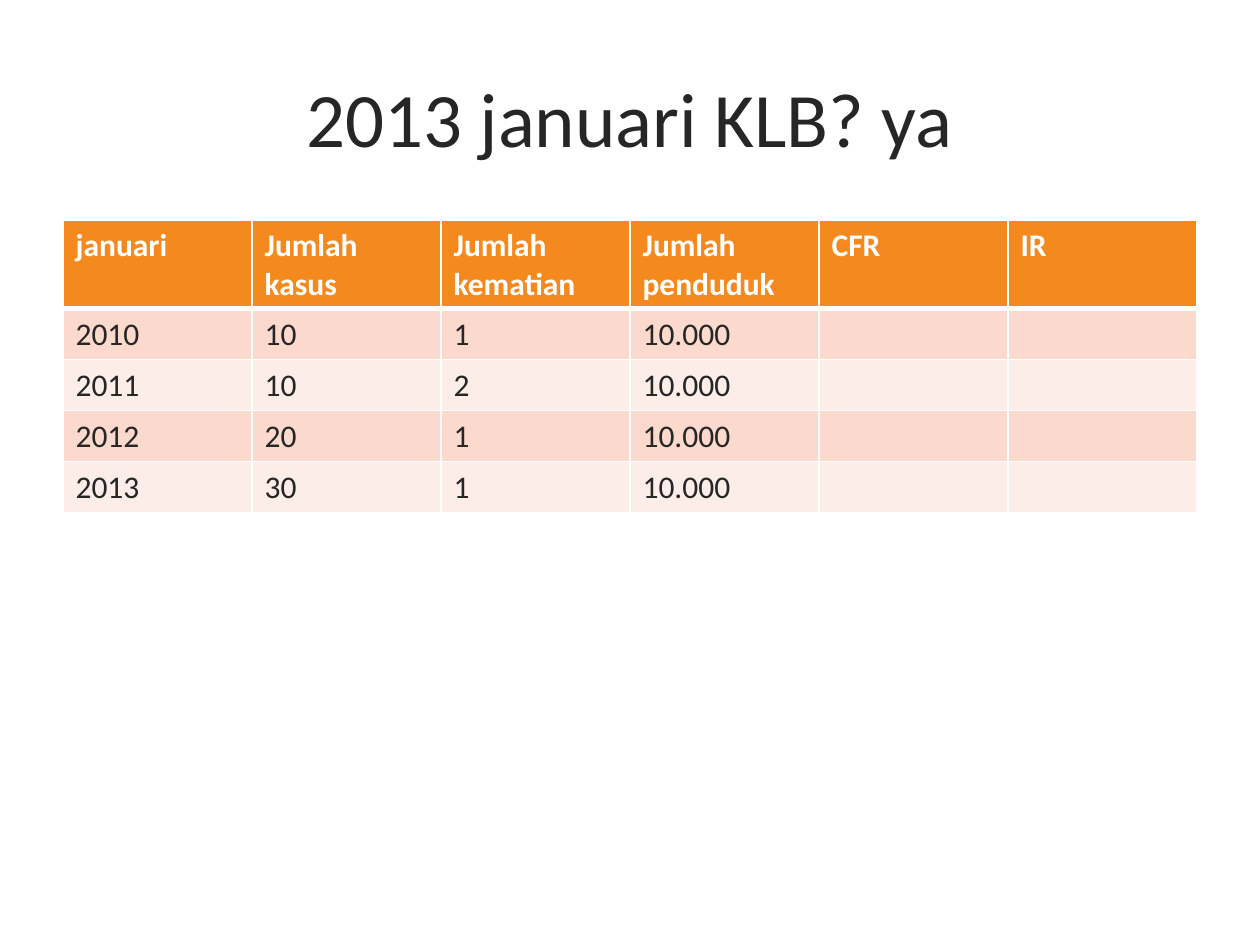
from dataclasses import dataclass

from lxml.etree import SubElement
from pptx import Presentation
from pptx.dml.color import RGBColor as RGB
from pptx.enum.text import MSO_ANCHOR as Anchor, PP_ALIGN as Align
from pptx.oxml.ns import qn
from pptx.util import Inches, Pt


@dataclass(frozen=True)
class Theme:
    font: str = "Calibri"
    ink: str = "262626"
    white: str = "FFFFFF"
    header: str = "F4891E"
    bands: tuple = ("FBDACD", "FDEDE8")
    title_size: int = 44
    table_size: int = 18
    rule: int = 1
    header_rule: int = 3


theme = Theme()


def add_run(paragraph, text, size, color, bold=False):
    run = paragraph.add_run()
    run.text = text
    run.font.name = theme.font
    run.font.size = Pt(size)
    run.font.bold = bold
    run.font.color.rgb = RGB.from_string(color)


def add_border(cell, side, width):
    line = SubElement(cell._tc.get_or_add_tcPr(), qn(f"a:ln{side}"), w=str(Pt(width)))
    SubElement(SubElement(line, qn("a:solidFill")), qn("a:srgbClr"), val=theme.white)


prs = Presentation()
prs.slide_width = Inches(10)
prs.slide_height = Inches(7.5)
slide = prs.slides.add_slide(prs.slide_layouts[6])

heading = slide.shapes.add_textbox(Inches(0.5), Inches(0.3), Inches(9), Inches(1.25)).text_frame
heading.word_wrap = True
heading.vertical_anchor = Anchor.MIDDLE
heading.paragraphs[0].alignment = Align.CENTER
add_run(heading.paragraphs[0], "2013 januari KLB? ya", theme.title_size, theme.ink)

records = [
    ("januari", "Jumlah kasus", "Jumlah kematian", "Jumlah penduduk", "CFR", "IR"),
    ("2010", "10", "1", "10.000", "", ""),
    ("2011", "10", "2", "10.000", "", ""),
    ("2012", "20", "1", "10.000", "", ""),
    ("2013", "30", "1", "10.000", "", ""),
]
cases = slide.shapes.add_table(
    len(records), len(records[0]), Inches(0.5), Inches(1.75), Inches(9), Inches(2.32)
).table

for r, record in enumerate(records):
    is_header = r == 0
    cases.rows[r].height = Inches(0.7 if is_header else 0.405)
    fill = theme.header if is_header else theme.bands[(r - 1) % 2]
    ink = theme.white if is_header else theme.ink
    top = theme.header_rule if r == 1 else theme.rule
    bottom = theme.header_rule if is_header else theme.rule
    for c, entry in enumerate(record):
        cell = cases.cell(r, c)
        for side, width in zip("LRTB", (theme.rule, theme.rule, top, bottom)):
            add_border(cell, side, width)
        cell.fill.solid()
        cell.fill.fore_color.rgb = RGB.from_string(fill)
        if entry:
            add_run(cell.text_frame.paragraphs[0], entry, theme.table_size, ink, is_header)

prs.save("out.pptx")
